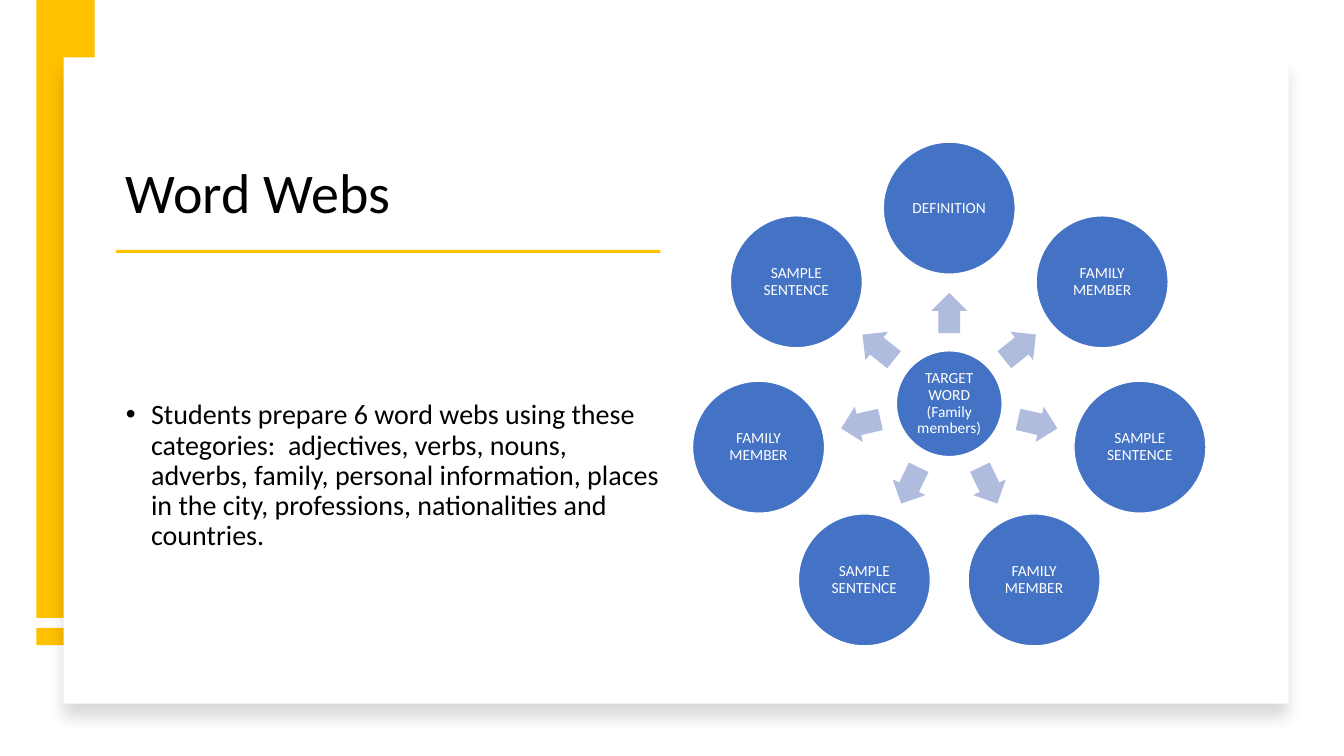
from math import cos, radians, sin

from lxml import etree
from pptx import Presentation
from pptx.dml.color import RGBColor
from pptx.enum.shapes import MSO_SHAPE
from pptx.enum.text import MSO_ANCHOR, PP_ALIGN
from pptx.oxml import parse_xml
from pptx.oxml.ns import nsdecls, qn
from pptx.util import Inches, Pt

RECTANGLE, OVAL, ARROW = MSO_SHAPE.RECTANGLE, MSO_SHAPE.OVAL, MSO_SHAPE.RIGHT_ARROW
MIDDLE, BOTTOM = MSO_ANCHOR.MIDDLE, MSO_ANCHOR.BOTTOM
LEFT, CENTER = PP_ALIGN.LEFT, PP_ALIGN.CENTER

GOLD = RGBColor(0xFF, 0xC0, 0x00)
BLUE = RGBColor(0x44, 0x72, 0xC4)
PALE_BLUE = RGBColor(0xB0, 0xBC, 0xDE)
WHITE = RGBColor(0xFF, 0xFF, 0xFF)
BLACK = RGBColor(0x00, 0x00, 0x00)

TITLE = "Word Webs"
TASK = ("Students prepare 6 word webs using these categories:  adjectives, verbs, nouns, "
        "adverbs, family, personal information, places in the city, professions, "
        "nationalities and countries.")
HUB = "TARGET WORD (Family members)"
MEMBER, SENTENCE = "FAMILY MEMBER", "SAMPLE SENTENCE"
# Clockwise from the top
SPOKES = ["DEFINITION", MEMBER, SENTENCE, MEMBER, SENTENCE, MEMBER, SENTENCE]

HUB_SIZE, NODE_SIZE = 1.05, 1.31
NODE_RADIUS, ARROW_RADIUS = 1.94, 0.9
ARROW_WIDTH, ARROW_HEIGHT = 0.4, 0.36


def add_filled(slide, kind, box, color):
    shape = slide.shapes.add_shape(kind, *map(Inches, box))
    shape.shadow.inherit = False
    shape.fill.solid()
    shape.fill.fore_color.rgb = color
    shape.line.fill.background()
    return shape


def write(shape, text, size, color, anchor, align, inset=None):
    """Put one paragraph of text into a shape or text box."""
    frame = shape.text_frame
    frame_format = {"word_wrap": True, "vertical_anchor": anchor}
    if inset is not None:
        for side in ("left", "top", "right", "bottom"):
            frame_format[f"margin_{side}"] = Inches(inset)
    for name, value in frame_format.items():
        setattr(frame, name, value)
    para = frame.paragraphs[0]
    para.alignment, para.line_spacing = align, 0.9
    span = para.add_run()
    span.text = text
    for name, value in {"name": "Calibri", "size": Pt(size)}.items():
        setattr(span.font, name, value)
    span.font.color.rgb = color
    return para


def add_bullet(para, indent):
    properties = para._p.get_or_add_pPr()
    properties.set("marL", str(Inches(indent)))
    properties.set("indent", str(-Inches(indent)))
    etree.SubElement(properties, qn("a:buFont")).set("typeface", "Arial")
    etree.SubElement(properties, qn("a:buChar")).set("char", "•")


def add_soft_shadow(shape):
    effects = shape._element.spPr.find(qn("a:effectLst"))
    effects.append(parse_xml(
        f'<a:outerShdw {nsdecls("a")} blurRad="{Pt(11)}" dist="{Pt(10)}" dir="5400000" '
        'algn="t" rotWithShape="0"><a:srgbClr val="000000"><a:alpha val="15000"/>'
        '</a:srgbClr></a:outerShdw>'))


def add_backdrop(slide, left, top, width, height):
    """Gold strip on the left, overlapped by the white card in the given box."""
    strip_left, strip_width = left - 0.27, 0.58
    add_filled(slide, RECTANGLE, (strip_left, 6.23, strip_width, 0.17), GOLD)
    add_filled(slide, RECTANGLE, (strip_left, 0, strip_width, 6.13), GOLD)
    add_soft_shadow(add_filled(slide, RECTANGLE, (left, top, width, height), WHITE))


def add_text_column(slide, left, top, width, height):
    """Title, gold rule and bulleted task stacked in the given box."""
    title_height, task_top = 1.28, 1.73
    title = slide.shapes.add_textbox(*map(Inches, (left, top, width, title_height)))
    write(title, TITLE, 40, BLACK, BOTTOM, LEFT)
    add_filled(slide, RECTANGLE, (left, top + 1.47, 5.4, 0.03), GOLD)
    task = slide.shapes.add_textbox(
        *map(Inches, (left, top + task_top, width, height - task_top)))
    para = write(task, TASK, 20, BLACK, MIDDLE, LEFT)
    para.space_before = Pt(10)
    add_bullet(para, 0.25)


def centered_box(x, y, width, height):
    return x - width / 2, y - height / 2, width, height


def add_circle(slide, x, y, size, label):
    circle = add_filled(slide, OVAL, centered_box(x, y, size, size), BLUE)
    circle.line.color.rgb = WHITE
    circle.line.width = Pt(1)
    write(circle, label, 11, WHITE, MIDDLE, CENTER, inset=0.02)


def add_word_web(slide, left, top, width):
    """Hub with arrows pointing to evenly spaced circles."""
    x = left + width / 2
    y = top + NODE_SIZE / 2 + NODE_RADIUS
    add_circle(slide, x, y, HUB_SIZE, HUB)
    for index, label in enumerate(SPOKES):
        degrees = 360 * index / len(SPOKES) - 90
        across, down = cos(radians(degrees)), sin(radians(degrees))
        arrow = add_filled(slide, ARROW, centered_box(
            x + ARROW_RADIUS * across, y + ARROW_RADIUS * down,
            ARROW_WIDTH, ARROW_HEIGHT), PALE_BLUE)
        arrow.adjustments[0], arrow.adjustments[1] = 0.6, 0.5
        arrow.rotation = degrees % 360
        add_circle(slide, x + NODE_RADIUS * across, y + NODE_RADIUS * down,
                   NODE_SIZE, label)


def main():
    deck = Presentation()
    deck.slide_width, deck.slide_height = Inches(13.33), Inches(7.5)
    slide = deck.slides.add_slide(deck.slide_layouts[6])
    add_backdrop(slide, 0.63, 0.57, 12.15, 6.41)
    add_text_column(slide, 1.15, 1.01, 5.51, 5.7)
    add_word_web(slide, 6.87, 1.41, 5.09)
    deck.save("out.pptx")


if __name__ == "__main__":
    main()
